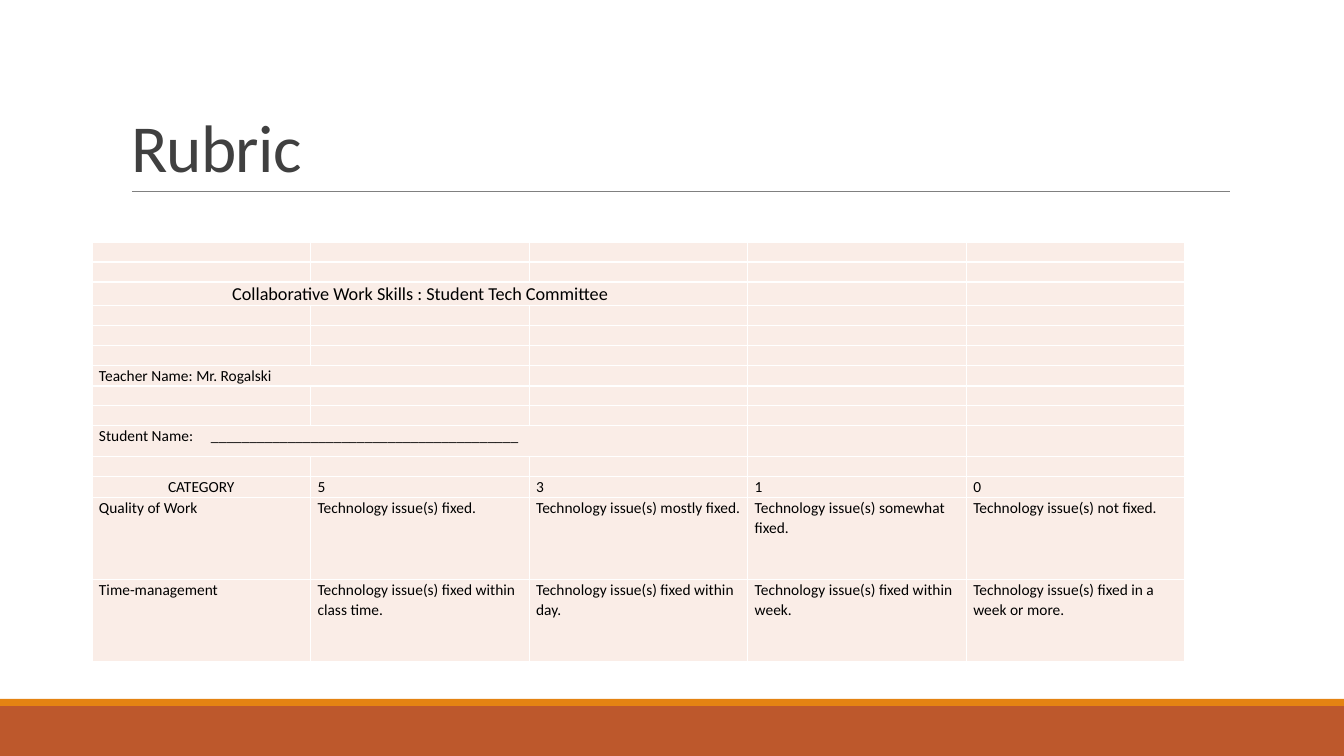
from lxml import etree
from pptx import Presentation, util as u
from pptx.dml.color import RGBColor
from pptx.enum import shapes, text
from pptx.oxml.ns import qn

# Content: (row height, column span of first cell, texts)
TITLE = "Rubric"
HEAD = "Collaborative Work Skills : Student Tech Committee"
GAP = (20, 1, [])
ROWS = [
    GAP, GAP,
    (23, 3, [HEAD]),
    GAP, GAP, GAP,
    (20, 2, ["Teacher Name: Mr. Rogalski"]),
    GAP, GAP,
    (31, 3, ["Student Name:\t" + "_" * 40]),
    GAP,
    (20, 1, ["CATEGORY", "5", "3", "1", "0"]),
    (82, 1, ["Quality of Work", "Technology issue(s) fixed.",
             "Technology issue(s) mostly fixed.",
             "Technology issue(s) somewhat fixed.",
             "Technology issue(s) not fixed."]),
    (82, 1, ["Time-management",
             "Technology issue(s) fixed within class time.",
             "Technology issue(s) fixed within day.",
             "Technology issue(s) fixed within week.",
             "Technology issue(s) fixed in a week or more."]),
]
HUES = {"rust": "BD582C", "amber": "E48312", "rule": "808080", "title": "404040",
        "cell": "FAEDE7", "edge": "FFFFFF", "ink": "000000"}
BANDS = [(706, 50, "rust"), (699, 7, "amber")]
WIDE, HIGH, COLS = 1344, 756, 5
LEFT, TOP, SPAN = 92, 242, 1093
PAD, TAB = 7, 112


def px(n):
    return u.Emu(round(n * 914400 / 100.8))


def hue(name):
    return RGBColor.from_string(HUES[name])


def write(frame, words, size=11, color="ink", align=text.PP_ALIGN.LEFT, lead=1.07):
    par = frame.paragraphs[0]
    par.alignment, par.line_spacing = align, lead
    if not words:
        par._p.get_or_add_endParaRPr().set("sz", str(size * 100))
        return par
    run = par.add_run()
    run.text = words
    run.font.size, run.font.name = u.Pt(size), "Calibri"
    run.font.color.rgb = hue(color)
    return par


def edge(cell):
    props = cell._tc.get_or_add_tcPr()
    for i, side in enumerate(("lnL", "lnR", "lnT", "lnB")):
        line = etree.Element(qn("a:" + side), w=str(u.Pt(1)))
        fill = etree.SubElement(line, qn("a:solidFill"))
        etree.SubElement(fill, qn("a:srgbClr"), val=HUES["edge"])
        props.insert(i, line)


deck = Presentation()
deck.slide_width, deck.slide_height = px(WIDE), px(HIGH)
slide = deck.slides.add_slide(deck.slide_layouts[5])

# Bands at the foot
for top, high, name in BANDS:
    band = slide.shapes.add_shape(shapes.MSO_SHAPE.RECTANGLE,
                                  0, px(top), px(WIDE), px(high))
    band.shadow.inherit = False
    band.fill.solid()
    band.fill.fore_color.rgb = hue(name)
    band.line.fill.background()

# Title and its rule
rule = slide.shapes.add_connector(shapes.MSO_CONNECTOR.STRAIGHT,
                                  px(132), px(191), px(1230), px(191))
rule.line.color.rgb, rule.line.width = hue("rule"), u.Pt(0.5)
etree.SubElement(rule._element.spPr, qn("a:effectLst"))
title = slide.shapes.title
title.left, title.top, title.width, title.height = map(px, (121, 31, 1109, 160))
frame = title.text_frame
frame.vertical_anchor = text.MSO_ANCHOR.BOTTOM
frame.auto_size = text.MSO_AUTO_SIZE.NONE
par = write(frame, TITLE, size=48, color="title", lead=0.85)
par.runs[0].font._element.set("spc", "-50")

# Rubric table
table = slide.shapes.add_table(len(ROWS), COLS, px(LEFT), px(TOP), px(SPAN),
                               px(sum(row[0] for row in ROWS))).table
table.first_row = table.horz_banding = False
for col in table.columns:
    col.width = px(SPAN / COLS)
for r, (high, span, words) in enumerate(ROWS):
    table.rows[r].height = px(high)
    for c in range(COLS):
        cell = table.cell(r, c)
        cell.margin_left = cell.margin_right = px(PAD)
        cell.margin_top = cell.margin_bottom = 0
        cell.fill.solid()
        cell.fill.fore_color.rgb = hue("cell")
        edge(cell)
        said = words[c] if c < len(words) else ""
        mid = said in (HEAD, "CATEGORY")
        par = write(cell.text_frame, said, size=13 if said == HEAD else 11,
                    align=text.PP_ALIGN.CENTER if mid else text.PP_ALIGN.LEFT)
        if "\t" in said:
            tabs = etree.SubElement(par._p.get_or_add_pPr(), qn("a:tabLst"))
            etree.SubElement(tabs, qn("a:tab"), pos=str(px(TAB)), algn="l")
    if span > 1:
        table.cell(r, 0).merge(table.cell(r, span - 1))

deck.save("out.pptx")
